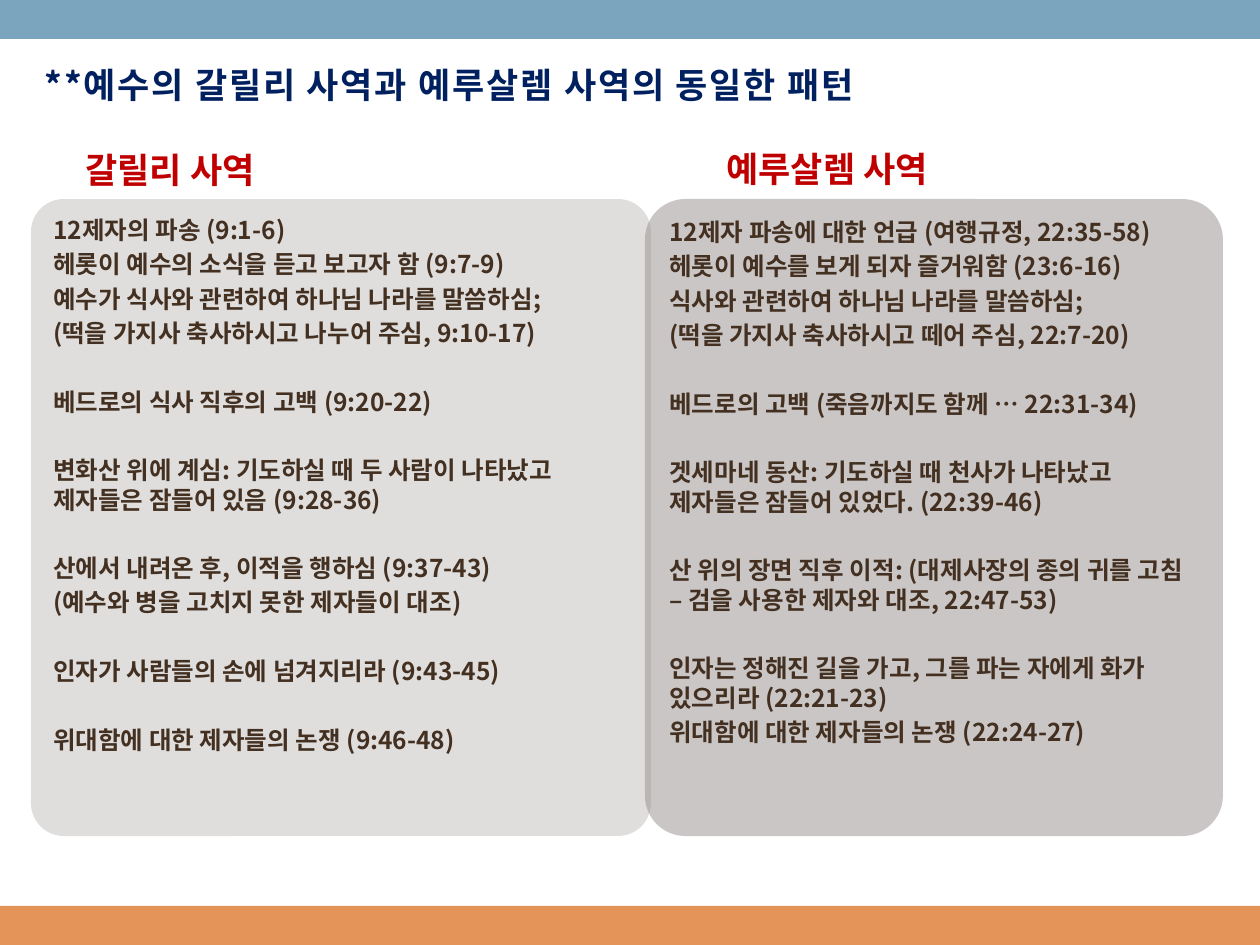
from lxml import etree
from pptx import Presentation
from pptx import util as u
from pptx.dml.color import RGBColor
from pptx.enum import shapes, text
from pptx.oxml.ns import qn

SCALE = 914400 / 126
FONT = "Noto Sans CJK KR"
LINE = 1.2    # line height, in font sizes
SPACE = 0.2   # space before a paragraph, in font sizes
COLORS = {
    "top": "7BA5BE", "bottom": "E49458", "title": "002060", "heading": "C00000",
    "body": "433021", "galilee": "C0BEBD", "jerusalem": "948F8D",
}

# Each inner list is a group of paragraphs; a blank line's height parts the groups.
GALILEE = [
    ["12제자의 파송 (9:1-6)",
     "헤롯이 예수의 소식을 듣고 보고자 함 (9:7-9)",
     "예수가 식사와 관련하여 하나님 나라를 말씀하심;",
     "(떡을 가지사 축사하시고 나누어 주심, 9:10-17)"],
    ["베드로의 식사 직후의 고백 (9:20-22)"],
    ["변화산 위에 계심: 기도하실 때 두 사람이 나타났고 제자들은 잠들어 있음 (9:28-36)"],
    ["산에서 내려온 후, 이적을 행하심 (9:37-43)",
     "(예수와 병을 고치지 못한 제자들이 대조)"],
    ["인자가 사람들의 손에 넘겨지리라 (9:43-45)"],
    ["위대함에 대한 제자들의 논쟁 (9:46-48)"],
]
JERUSALEM = [
    ["12제자 파송에 대한 언급 (여행규정, 22:35-58)",
     "헤롯이 예수를 보게 되자 즐거워함 (23:6-16)",
     "식사와 관련하여 하나님 나라를 말씀하심;",
     "(떡을 가지사 축사하시고 떼어 주심, 22:7-20)"],
    ["베드로의 고백 (죽음까지도 함께 … 22:31-34)"],
    ["겟세마네 동산: 기도하실 때 천사가 나타났고 제자들은 잠들어 있었다. (22:39-46)"],
    ["산 위의 장면 직후 이적: (대제사장의 종의 귀를 고침 – 검을 사용한 제자와 대조, 22:47-53)"],
    ["인자는 정해진 길을 가고, 그를 파는 자에게 화가 있으리라 (22:21-23)",
     "위대함에 대한 제자들의 논쟁 (22:24-27)"],
]


def px(n):
    return u.Emu(round(n * SCALE))


def rgb(name):
    return RGBColor.from_string(COLORS[name])


def place(sp, x, y, w, h):
    sp.left, sp.top, sp.width, sp.height = px(x), px(y), px(w), px(h)


def add_run(p, words, size, color):
    p.alignment = text.PP_ALIGN.LEFT
    p.line_spacing = u.Pt(size * LINE)
    r = p.add_run()
    r.text = words
    r.font.size = u.Pt(size)
    r.font.bold = True
    r.font.name = FONT
    r.font.color.rgb = rgb(color)
    etree.SubElement(r._r.get_or_add_rPr(), qn("a:ea"), typeface=FONT)
    return r


def add_band(s, y, h, color):
    sp = s.shapes.add_shape(shapes.MSO_SHAPE.RECTANGLE, 0, px(y), px(1260), px(h))
    sp.shadow.inherit = False
    sp.fill.solid()
    sp.fill.fore_color.rgb = rgb(color)
    sp.line.fill.background()


def set_title(sp, words):
    place(sp, 32, 53, 1178, 63)
    tf = sp.text_frame
    tf.auto_size = text.MSO_AUTO_SIZE.NONE
    tf.vertical_anchor = text.MSO_ANCHOR.MIDDLE
    r = add_run(tf.paragraphs[0], words, 20, "title")
    r._r.get_or_add_rPr().set("spc", "100")


def add_heading(s, x, y, w, words):
    tf = s.shapes.add_textbox(px(x), px(y), px(w), px(55)).text_frame
    tf.word_wrap = True
    add_run(tf.paragraphs[0], words, 20, "heading")


def make_panel(sp, color, radius):
    """Give a placeholder a rounded outline and a half-transparent fill."""
    geom = etree.SubElement(sp._element.spPr, qn("a:prstGeom"), prst="roundRect")
    guides = etree.SubElement(geom, qn("a:avLst"))
    etree.SubElement(guides, qn("a:gd"), name="adj", fmla=f"val {radius}")
    sp.fill.solid()
    sp.fill.fore_color.rgb = rgb(color)
    clr = sp._element.spPr.find(qn("a:solidFill"))[0]
    etree.SubElement(clr, qn("a:alpha"), val="50000")


def fill_list(sp, groups, size=14):
    tf = sp.text_frame
    tf.auto_size = text.MSO_AUTO_SIZE.NONE
    tf.vertical_anchor = text.MSO_ANCHOR.TOP
    for g, group in enumerate(groups):
        for i, words in enumerate(group):
            first = g == i == 0
            p = tf.paragraphs[0] if first else tf.add_paragraph()
            add_run(p, words, size, "body")
            gap = SPACE if i else 2 * SPACE + LINE
            p.space_before = u.Pt(0 if first else round(size * gap, 1))
            pPr = p._p.get_or_add_pPr()
            pPr.set("marL", "0")
            pPr.set("indent", "0")
            etree.SubElement(pPr, qn("a:buNone"))


def main():
    prs = Presentation()
    prs.slide_width, prs.slide_height = px(1260), px(945)
    s = prs.slides.add_slide(prs.slide_layouts[3])
    title, left, right = s.placeholders

    add_band(s, 906, 39, "bottom")
    add_band(s, 0, 39, "top")
    set_title(title, "**예수의 갈릴리 사역과 예루살렘 사역의 동일한 패턴")

    for sp, x, w, color, radius, groups in (
        (left, 31, 620, "galilee", 5300, GALILEE),
        (right, 645, 578, "jerusalem", 7000, JERUSALEM),
    ):
        place(sp, x, 199, w, 637)
        make_panel(sp, color, radius)
        fill_list(sp, groups)

    add_heading(s, 73, 142, 266, "갈릴리 사역")
    add_heading(s, 714, 141, 284, "예루살렘 사역")
    prs.save("out.pptx")


if __name__ == "__main__":
    main()
